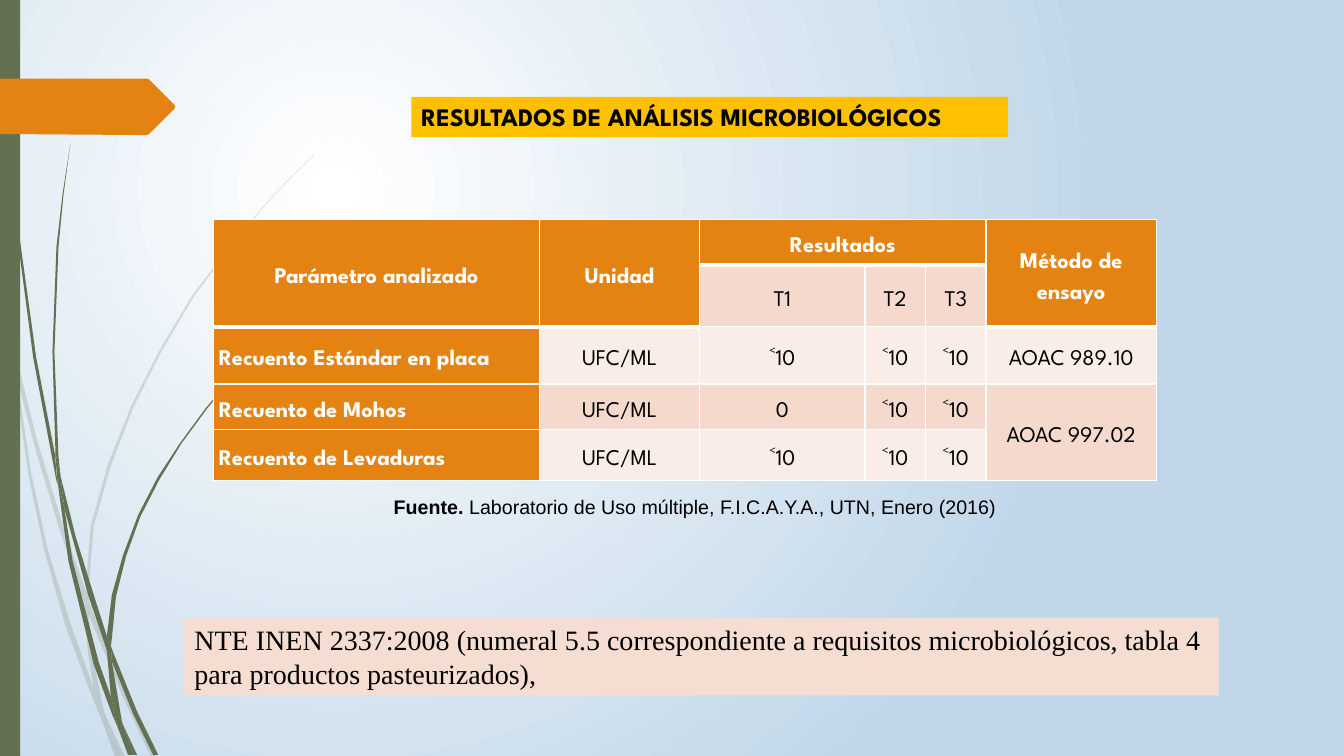
from pptx import Presentation
from pptx.dml.color import RGBColor
from pptx.enum.dml import MSO_THEME_COLOR
from pptx.enum.shapes import MSO_SHAPE as Shape
from pptx.enum.text import MSO_ANCHOR as Anchor, MSO_AUTO_SIZE as AutoSize, PP_ALIGN as Align
from pptx.oxml.xmlchemy import OxmlElement
from pptx.util import Pt

PX = 9144  # 100 px to the inch
COLORS = {
    "white": "FFFFFF", "black": "000000", "sky": "C1D7E9", "moss": "637052",
    "orange": "E48312", "gold": "FFC000", "rose": "F5D9CC", "blush": "FAEDE7", "note": "F5DDD2",
}


def paint(fill, color):
    fill.solid()
    fill.fore_color.rgb = RGBColor.from_string(COLORS[color])


def write(frame, text, size=16, font="League Spartan", color="black", bold=False,
          align=Align.LEFT, spacing=None, gap=None):
    """Add a run to the last paragraph of a text frame and format both."""
    paragraph = frame.paragraphs[-1]
    paragraph.alignment = align
    if spacing:
        paragraph.line_spacing = spacing
    if gap is not None:
        paragraph.space_before = paragraph.space_after = Pt(gap)
    run = paragraph.add_run()
    run.text = text
    run.font.size, run.font.name, run.font.bold = Pt(size), font, bold
    run.font.color.rgb = RGBColor.from_string(COLORS[color])


prs = Presentation()
prs.slide_width, prs.slide_height = 1333 * PX, 750 * PX
slide = prs.slides.add_slide(prs.slide_layouts[5])

# Background: light spreading from the upper left
sky = slide.background.fill
sky.gradient()
for stop, position, color in zip(sky.gradient_stops, (0, 1), ("white", "sky")):
    stop.position = position
    stop.color.rgb = RGBColor.from_string(COLORS[color])
glow = OxmlElement("a:path")
glow.set("path", "circle")
focus = OxmlElement("a:fillToRect")
for side, share in (("l", 50000), ("t", 50000), ("r", 100000), ("b", 100000)):
    focus.set(side, str(share))
glow.append(focus)
gradient = slide.background.fill._fill._gradFill
for linear in gradient.findall("{*}lin"):
    gradient.replace(linear, glow)

# Grass: outlines of the pale blades, then of the dark ones
PALE_BLADES = [
    [(11, 350), (9, 322), (0, 282), (0, 299), (10, 344)],
    [(58, 522), (84, 599), (85, 586), (62, 520), (36, 434), (14, 345), (17, 376), (36, 449)],
    [(92, 607), (88, 596), (88, 610), (123, 694), (150, 751), (155, 751), (127, 692)],
    [(119, 751), (124, 751), (105, 711)],
    [(93, 683), (70, 619), (47, 544), (31, 469), (17, 376), (11, 350), (28, 470), (44, 546),
     (65, 621), (92, 693), (101, 714), (99, 707)],
    [(84, 599), (87, 646), (93, 683), (96, 692), (105, 711), (103, 706), (91, 646), (88, 610),
     (88, 608)],
    [(88, 584), (93, 522), (110, 462), (132, 405), (160, 349), (192, 295), (229, 245),
     (268, 198), (290, 175), (312, 154), (312, 153), (289, 175), (268, 197), (228, 244),
     (190, 294), (158, 348), (130, 403), (107, 461), (90, 522), (85, 584), (85, 586), (88, 596)],
    [(101, 714), (114, 751), (119, 751)],
    [(88, 608), (88, 610), (88, 596), (85, 586), (84, 599)],
    [(96, 692), (93, 683), (99, 707), (101, 714), (119, 751), (105, 711)],
]
DARK_BLADES = [
    [(7, 110), (17, 233), (33, 355), (56, 477), (57, 481), (55, 457), (55, 453), (36, 355),
     (19, 232), (8, 109), (5, 48), (4, 0), (3, 0), (4, 48)],
    [(88, 592), (106, 645), (106, 633), (106, 631), (93, 590), (75, 532), (60, 472), (64, 505)],
    [(113, 649), (110, 641), (111, 656), (132, 708), (152, 749), (157, 749), (136, 706)],
    [(110, 691), (98, 657), (72, 556), (64, 505), (57, 477), (68, 557), (93, 659), (111, 708),
     (117, 722), (116, 717)],
    [(60, 472), (58, 453), (54, 349), (58, 245), (63, 193), (70, 141), (62, 193), (56, 245),
     (52, 349), (55, 449)],
    [(133, 749), (136, 749), (122, 719)],
    [(57, 477), (64, 505), (60, 472), (55, 449), (55, 453)],
    [(111, 633), (115, 592), (125, 552), (139, 513), (158, 476), (180, 440), (205, 406),
     (231, 374), (245, 359), (261, 344), (260, 344), (245, 358), (231, 373), (204, 405),
     (179, 439), (156, 474), (137, 511), (122, 551), (111, 590), (106, 631), (110, 641)],
    [(117, 722), (127, 749), (131, 749)],
    [(106, 645), (110, 691), (116, 706), (122, 719), (121, 716), (111, 656), (109, 651)],
    [(106, 645), (109, 651), (111, 656), (110, 641), (106, 631), (106, 633)],
    [(116, 706), (110, 691), (116, 717), (117, 722), (130, 749), (133, 749), (122, 719)],
]
ARROW = [(173, 108), (148, 133), (146, 134), (136, 134), (0, 133), (0, 78), (146, 78), (148, 79),
         (173, 104), (174, 106)]
for blades, opacity in ((PALE_BLADES, 20), (DARK_BLADES, 100)):
    tuft = slide.shapes.add_group_shape()
    for outline in blades:
        builder = tuft.shapes.build_freeform(*outline[0], scale=PX)
        builder.add_line_segments(outline[1:], close=True)
        blade = builder.convert_to_shape()
        blade.shadow.inherit = False
        paint(blade.fill, "moss")
        blade.line.fill.background()
        if opacity < 100:
            alpha = OxmlElement("a:alpha")
            alpha.set("val", str(opacity * 1000))
            blade.fill._xPr.find("{*}solidFill")[0].append(alpha)

# Side bar, arrow and note
side_bar = slide.shapes.add_shape(Shape.RECTANGLE, 0, 0, 20 * PX, 750 * PX)
builder = slide.shapes.build_freeform(*ARROW[0], scale=PX)
builder.add_line_segments(ARROW[1:], close=True)
arrow = builder.convert_to_shape()
note = slide.shapes.add_shape(Shape.RECTANGLE, 183 * PX, 613 * PX, 1026 * PX, 77 * PX)
for part, color in ((side_bar, "moss"), (arrow, "orange"), (note, "note")):
    part.shadow.inherit = False
    paint(part.fill, color)
    part.line.fill.background()
note.text_frame.word_wrap = True
note.text_frame.vertical_anchor = Anchor.TOP
write(note.text_frame, "NTE INEN 2337:2008 (numeral 5.5 correspondiente a requisitos microbiológicos, "
      "tabla 4 para productos pasteurizados),", size=20, font="Times New Roman")

# Title
title = slide.shapes.title
title.left, title.top, title.width, title.height = (n * PX for n in (408, 96, 592, 40))
paint(title.fill, "gold")
title.text_frame.auto_size = AutoSize.NONE
title.text_frame.word_wrap = True
title.text_frame.vertical_anchor = Anchor.TOP
write(title.text_frame, "RESULTADOS DE ANÁLISIS MICROBIOLÓGICOS", size=18, bold=True)

# Results table
COLUMNS = [323, 159, 164, 60, 60, 169]
ROWS = [45, 51, 57, 45, 51]
RESULTS = [
    ["Parámetro analizado", "Unidad", "Resultados", "", "", "Método de ensayo"],
    ["", "", "T1", "T2", "T3", ""],
    ["Recuento Estándar en placa", "UFC/ML", "˂10", "˂10", "˂10", "AOAC 989.10"],
    ["Recuento de Mohos", "UFC/ML", "0", "˂10", "˂10", "AOAC 997.02"],
    ["Recuento de Levaduras", "UFC/ML", "˂10", "˂10", "˂10", ""],
]
MERGES = [(0, 0, 1, 0), (0, 1, 1, 1), (0, 2, 0, 4), (0, 5, 1, 5), (3, 5, 4, 5)]
table = slide.shapes.add_table(len(ROWS), len(COLUMNS), 212 * PX, 218 * PX,
                               sum(COLUMNS) * PX, sum(ROWS) * PX).table
table.first_row = table.horz_banding = False
for column, width in zip(table.columns, COLUMNS):
    column.width = width * PX
for row, height in zip(table.rows, ROWS):
    row.height = height * PX
for top, left, bottom, right in MERGES:
    table.cell(top, left).merge(table.cell(bottom, right))
for r, texts in enumerate(RESULTS):
    for c, text in enumerate(texts):
        cell = table.cell(r, c)
        heading = r == 0 or c == 0 or (r == 1 and c in (1, 5))
        cell.margin_left = cell.margin_right = 5 * PX
        cell.margin_top = cell.margin_bottom = 0
        cell.vertical_anchor = Anchor.MIDDLE
        for side in "LRTB":
            thick = side == "B" and heading and r < 2 or side == "T" and r == 2 and c in (0, 1, 5)
            border = OxmlElement(f"a:ln{side}")
            border.set("w", str(Pt(3 if thick else 1)))
            ink = OxmlElement("a:solidFill")
            white = OxmlElement("a:srgbClr")
            white.set("val", COLORS["white"])
            ink.append(white)
            border.append(ink)
            cell._tc.get_or_add_tcPr().append(border)
        paint(cell.fill, "orange" if heading else "rose" if r % 2 else "blush")
        if text:
            write(cell.text_frame, text, color="white" if heading else "black", bold=heading,
                  align=Align.LEFT if c == 0 and r > 1 else Align.CENTER, spacing=1.5)

# Source line
credit = slide.shapes.add_textbox(356 * PX, 474 * PX, 667 * PX, 41 * PX).text_frame
credit.word_wrap = True
for text, bold in (("Fuente. ", True),
                   ("Laboratorio de Uso múltiple, F.I.C.A.Y.A., UTN, Enero (2016)", False)):
    write(credit, text, size=14, font="Arial", bold=bold, align=Align.CENTER, spacing=1.5, gap=6)

prs.save("out.pptx")
